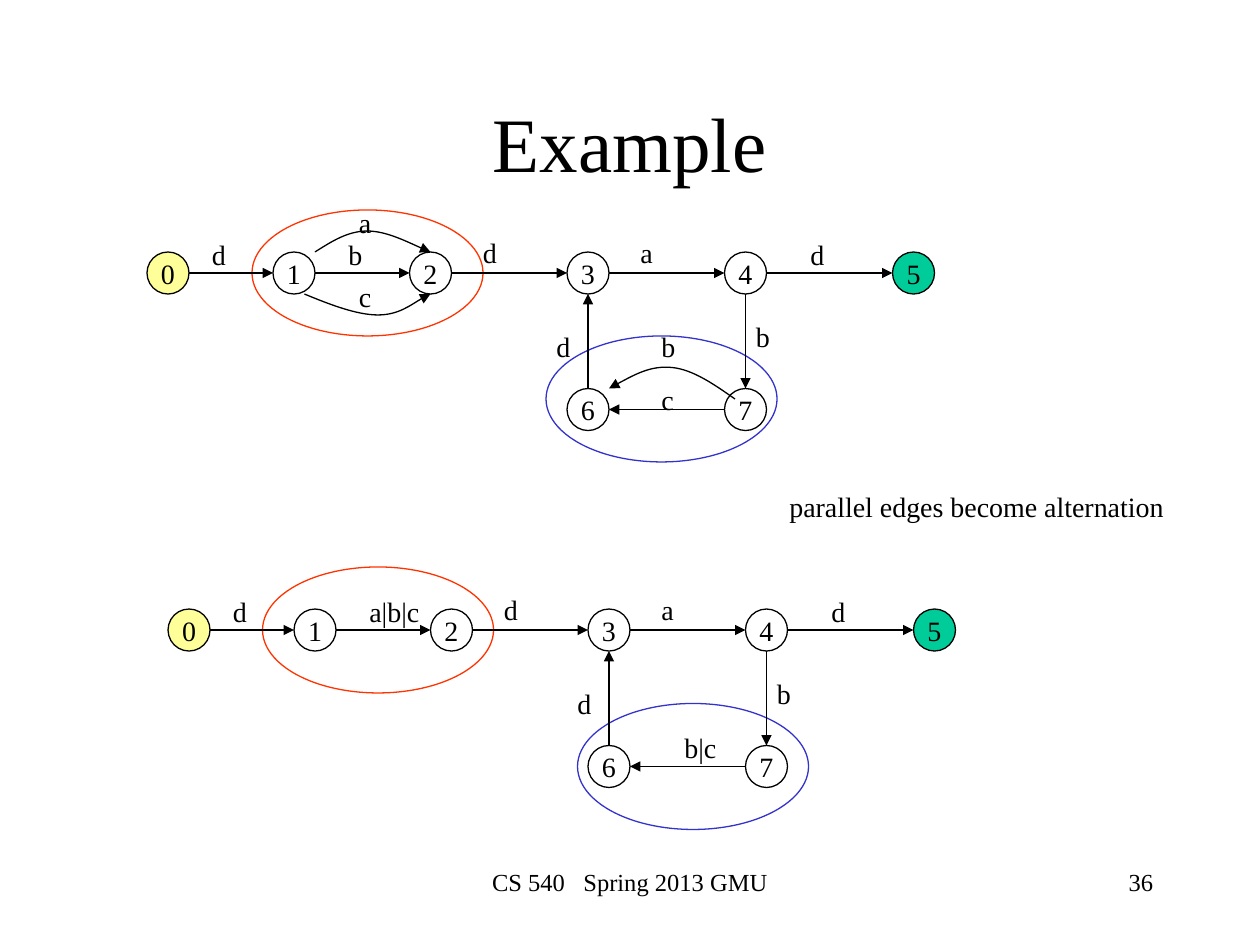
from collections import namedtuple

from lxml import etree
from pptx import Presentation
from pptx import util as u
from pptx.dml.color import RGBColor
from pptx.enum import shapes, text
from pptx.oxml import ns

BLACK = RGBColor(0x00, 0x00, 0x00)
RED = RGBColor(0xFF, 0x33, 0x00)
BLUE = RGBColor(0x33, 0x33, 0xCC)
YELLOW = RGBColor(0xFF, 0xFF, 0x99)
GREEN = RGBColor(0x00, 0xCC, 0x99)

Box = namedtuple("Box", "left top width height")

CELLS_PER_INCH = 12
NODE_SIZE = 4
LABEL_HEIGHT = 4.4
LABEL_WIDTHS = {1: 3.7, 3: 5.5, 5: 7.2}
NODES = {
    "0": (0, 0), "1": (12, 0), "2": (25, 0), "3": (40, 0),
    "4": (55, 0), "5": (71, 0), "6": (40, 13), "7": (55, 13),
}
NODE_FILLS = {"0": YELLOW, "5": GREEN}
EDGES = ["01", "12", "23", "34", "45", "63", "76", "47"]
SHARED_LABELS = [
    ("d", 5, -2), ("d", 30.8, -2.2), ("a", 45.8, -2.2),
    ("d", 62, -2), ("d", 37.8, 6.8), ("b", 56.8, 5.8),
]
PARALLEL_LABELS = [
    ("a", 19, -5), ("b", 18, -2), ("c", 19, 2), ("b", 47.8, 6.8), ("c", 47.8, 11.8),
]
MERGED_LABELS = [("a|b|c", 18, -2), ("b|c", 48, 11)]
PARALLEL_CURVES = [
    [(16, 0), (17.6, -1), (19.1, -2), (21, -2), (22.8, -2), (26, -0.4), (27, 0)],
    [(15, 4), (17.4, 5), (20, 6), (22, 6), (24, 6), (26.2, 4.3), (27, 4)],
    [(56, 14), (54, 12.6), (52, 11.2), (50, 11), (48, 10.8), (46, 11.9), (44, 13)],
]


def grid(cells):
    """Convert grid cells to a length."""
    return u.Cm(2.54 * cells / CELLS_PER_INCH)


def place(box, x, y, width, height):
    """Return the lengths of a part placed relative to a box."""
    return [grid(n) for n in (box.left + x, box.top + y, width, height)]


def write(shape, content, size, align=text.PP_ALIGN.LEFT, **frame_format):
    """Write one formatted paragraph into a shape."""
    frame = shape.text_frame
    for name, value in frame_format.items():
        setattr(frame, name, value)
    paragraph = frame.paragraphs[0]
    paragraph.alignment = align
    run = paragraph.add_run()
    run.text = content
    for name, value in {"size": u.Pt(size), "name": "Times New Roman"}.items():
        setattr(run.font, name, value)
    run.font.color.rgb = BLACK


def style_line(shape, color=BLACK, arrow=False):
    """Give a shape a thin line, with an arrowhead at its end if asked."""
    shape.line.color.rgb = color
    shape.line.width = u.Pt(0.75)
    if arrow:
        line = shape.line._get_or_add_ln()
        etree.SubElement(line, ns.qn("a:tailEnd"), type="triangle")


def add_ellipse(slide, position, color=BLACK, fill=None):
    """Add an outlined ellipse."""
    shape = slide.shapes.add_shape(shapes.MSO_SHAPE.OVAL, *position)
    shape.shadow.inherit = False
    if fill is None:
        shape.fill.background()
    else:
        shape.fill.solid()
        shape.fill.fore_color.rgb = fill
    style_line(shape, color)
    return shape


def add_node(slide, box, name):
    """Add a numbered state."""
    position = place(box, *NODES[name], NODE_SIZE, NODE_SIZE)
    shape = add_ellipse(slide, position, fill=NODE_FILLS.get(name))
    margins = dict.fromkeys(
        ["margin_left", "margin_right", "margin_top", "margin_bottom"], 0)
    write(shape, name, 16, text.PP_ALIGN.CENTER, word_wrap=False,
          vertical_anchor=text.MSO_ANCHOR.MIDDLE, **margins)


def add_edge(slide, box, source, target):
    """Add a straight arrow between the rims of two states."""
    starts, ends = [], []
    radius = NODE_SIZE / 2
    for corner, a, b in zip((box.left, box.top), NODES[source], NODES[target]):
        direction = (b > a) - (b < a)
        starts.append(grid(corner + a + radius + direction * radius))
        ends.append(grid(corner + b + radius - direction * radius))
    connector = slide.shapes.add_connector(
        shapes.MSO_CONNECTOR.STRAIGHT, *starts, *ends)
    style_line(connector, arrow=True)
    etree.SubElement(connector._element.spPr, ns.qn("a:effectLst"))


def add_curve(slide, box, points):
    """Add a curved arrow through cubic Bezier points."""
    start, *rest = [(grid(box.left + x), grid(box.top + y)) for x, y in points]
    builder = slide.shapes.build_freeform(*start)
    builder.add_line_segments(rest, close=False)
    shape = builder.convert_to_shape()
    segments = list(shape._element.iter(ns.qn("a:lnTo")))
    outline = segments[0].getparent()
    for first in range(0, len(segments), 3):
        bezier = etree.SubElement(outline, ns.qn("a:cubicBezTo"))
        for segment in segments[first:first + 3]:
            bezier.append(segment[0])
            outline.remove(segment)
    shape.fill.background()
    shape.shadow.inherit = False
    style_line(shape, arrow=True)


def add_label(slide, box, content, x, y):
    """Add an edge label."""
    position = place(box, x, y, LABEL_WIDTHS[len(content)], LABEL_HEIGHT)
    write(slide.shapes.add_textbox(*position), content, 16, word_wrap=False)


def add_graph(slide, box, labels, groups, curves=()):
    """Add an automaton with its highlighted groups of edges."""
    for color, x, y in groups:
        add_ellipse(slide, place(box, x, y, 22, 12), color)
    for name in NODES:
        add_node(slide, box, name)
    for source, target in EDGES:
        add_edge(slide, box, source, target)
    for points in curves:
        add_curve(slide, box, points)
    for label in SHARED_LABELS + labels:
        add_label(slide, box, *label)


def add_text(slide, box, content, size, align=text.PP_ALIGN.LEFT, **frame_format):
    """Add a text box that fills the given box."""
    shape = slide.shapes.add_textbox(*[grid(n) for n in box])
    write(shape, content, size, align, **{"word_wrap": True, **frame_format})


def main():
    """Build and save the slide."""
    presentation = Presentation()
    presentation.slide_width = u.Cm(25.4)
    presentation.slide_height = u.Cm(19.05)
    slide = presentation.slides.add_slide(presentation.slide_layouts[6])
    align = text.PP_ALIGN
    add_text(slide, Box(9, 6, 102, 15), "Example", 44, align.CENTER,
             vertical_anchor=text.MSO_ANCHOR.MIDDLE)
    add_graph(slide, Box(14, 24, 75, 17), PARALLEL_LABELS,
              [(RED, 10, -4), (BLUE, 38, 8)], PARALLEL_CURVES)
    add_text(slide, Box(74, 46, 38.3, LABEL_HEIGHT),
             "parallel edges become alternation", 16, word_wrap=False)
    add_graph(slide, Box(16, 58, 75, 17), MERGED_LABELS,
              [(RED, 9, -4), (BLUE, 39, 9)])
    add_text(slide, Box(41, 82, 38, 6), "CS 540   Spring 2013 GMU", 14, align.CENTER)
    add_text(slide, Box(86, 82, 25, 6), "36", 14, align.RIGHT)
    presentation.save("out.pptx")


if __name__ == "__main__":
    main()
